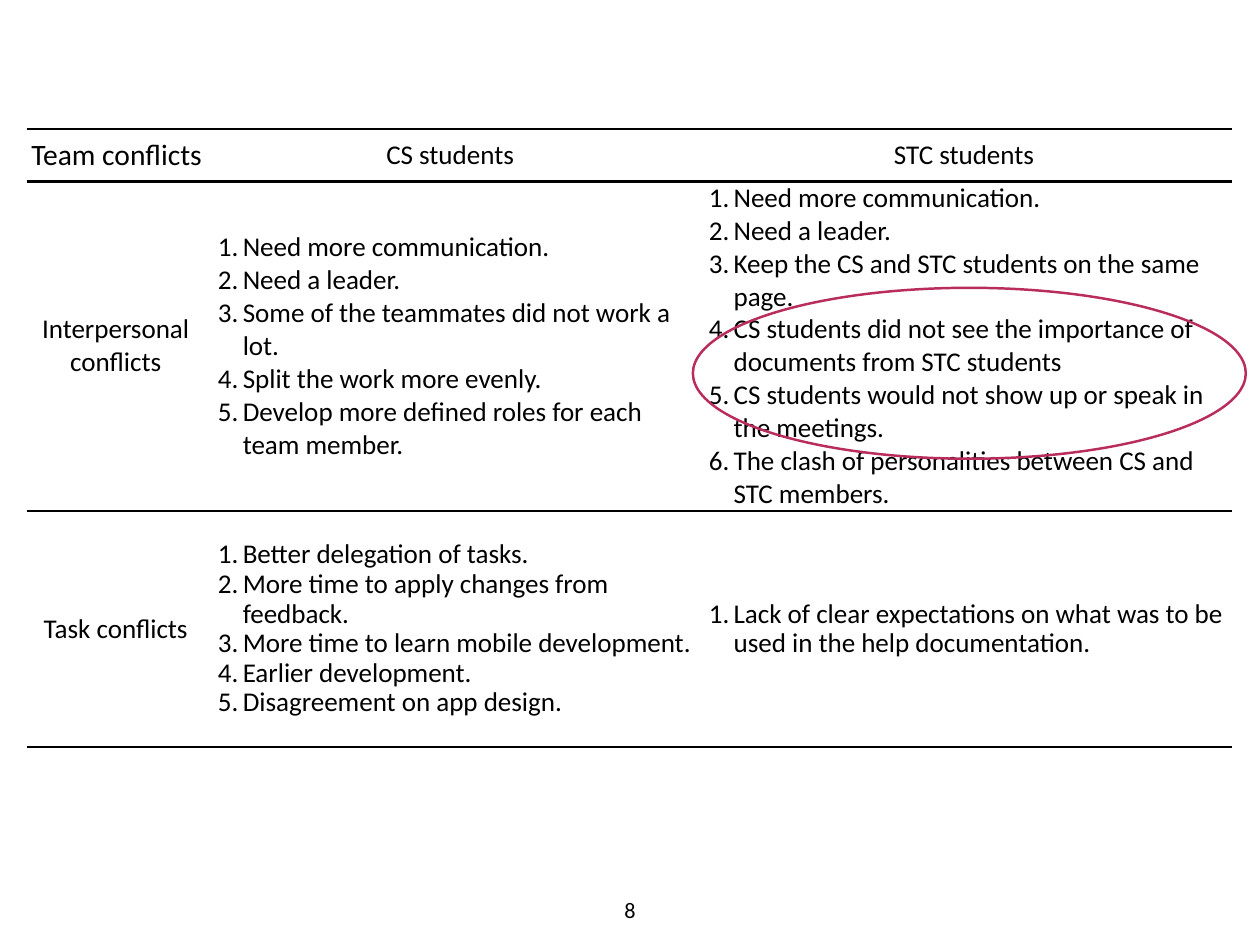
from lxml import etree
from pptx import Presentation
from pptx.dml.color import RGBColor
from pptx.enum.shapes import MSO_SHAPE
from pptx.enum.text import MSO_ANCHOR, PP_ALIGN
from pptx.oxml.ns import qn
from pptx.util import Inches, Pt

CENTER, LEFT = PP_ALIGN.CENTER, PP_ALIGN.LEFT
MIDDLE, TOP = MSO_ANCHOR.MIDDLE, MSO_ANCHOR.TOP
OVAL = MSO_SHAPE.OVAL

FONT = "Calibri"
BLACK = "000000"
CRIMSON = "B92D5D"
RULE_WIDTH = Pt(2)
COLUMN_WIDTHS = (2.01, 5.54, 6.06)
ROW_HEIGHTS = (0.59, 3.71, 2.67)

CONFLICTS = [
    ("Interpersonal conflicts", 1.0, [
        "Need more communication.",
        "Need a leader.",
        "Some of the teammates did not work a lot.",
        "Split the work more evenly.",
        "Develop more defined roles for each team member.",
    ], [
        "Need more communication.",
        "Need a leader.",
        "Keep the CS and STC students on the same page.",
        "CS students did not see the importance of documents from STC students",
        "CS students would not show up or speak in the meetings.",
        "The clash of personalities between CS and STC members.",
    ]),
    ("Task conflicts", 0.9, [
        "Better delegation of tasks.",
        "More time to apply changes from feedback.",
        "More time to learn mobile development.",
        "Earlier development.",
        "Disagreement on app design.",
    ], [
        "Lack of clear expectations on what was to be used in the help documentation.",
    ]),
]


def color(hex_value):
    return RGBColor.from_string(hex_value)


def write(frame, lines, size=22, align=CENTER, spacing=1.0, numbered=False):
    """Fill a text frame with one paragraph per line."""
    for index, line in enumerate(lines):
        paragraph = frame.paragraphs[0] if index == 0 else frame.add_paragraph()
        paragraph.alignment = align
        paragraph.line_spacing = spacing
        run = paragraph.add_run()
        run.text = line
        run.font.name = FONT
        run.font.size = Pt(size)
        run.font.color.rgb = color(BLACK)
        if numbered:
            properties = paragraph._p.get_or_add_pPr()
            properties.set("marL", str(Inches(0.43)))
            properties.set("indent", str(Inches(-0.28)))
            etree.SubElement(properties, qn("a:buAutoNum"), type="arabicPeriod")


def add_label(slide, text, left, top, width, height, size, anchor, inset):
    frame = slide.shapes.add_textbox(
        Inches(left), Inches(top), Inches(width), Inches(height)).text_frame
    frame.word_wrap = False
    frame.vertical_anchor = anchor
    frame.margin_left = frame.margin_right = Inches(inset)
    frame.margin_top = frame.margin_bottom = Inches(inset)
    write(frame, [text], size=size)


def style_cell(cell, inset):
    """Rule the cell above and below only, with no fill."""
    properties = cell._tc.get_or_add_tcPr()
    for side in ("lnL", "lnR", "lnT", "lnB"):
        border = etree.SubElement(properties, qn(f"a:{side}"))
        if side in ("lnT", "lnB"):
            border.set("w", str(RULE_WIDTH))
            fill = etree.SubElement(border, qn("a:solidFill"))
            etree.SubElement(fill, qn("a:srgbClr"), val=BLACK)
        else:
            etree.SubElement(border, qn("a:noFill"))
    cell.fill.background()
    cell.vertical_anchor = MIDDLE
    cell.margin_left = cell.margin_right = Inches(inset)
    cell.margin_top = cell.margin_bottom = Inches(inset)


def add_conflict_table(slide):
    table = slide.shapes.add_table(
        len(ROW_HEIGHTS), len(COLUMN_WIDTHS), Inches(0.3), Inches(1.46),
        Inches(sum(COLUMN_WIDTHS)), Inches(sum(ROW_HEIGHTS))).table
    table.first_row = table.horz_banding = False
    for column, width in zip(table.columns, COLUMN_WIDTHS):
        column.width = Inches(width)
    for row, height in zip(table.rows, ROW_HEIGHTS):
        row.height = Inches(height)
        for index, cell in enumerate(row.cells):
            style_cell(cell, inset=0.06 if index == 0 else 0)

    for column, group in enumerate(("CS students", "STC students"), start=1):
        write(table.cell(0, column).text_frame, [group], spacing=0.9)
    for row, (conflict, spacing, *answers) in enumerate(CONFLICTS, start=1):
        write(table.cell(row, 0).text_frame, [conflict])
        for column, items in enumerate(answers, start=1):
            write(table.cell(row, column).text_frame, items,
                  align=LEFT, spacing=spacing, numbered=True)


def add_highlight(slide, left, top, width, height):
    highlight = slide.shapes.add_shape(
        OVAL, Inches(left), Inches(top), Inches(width), Inches(height))
    highlight.shadow.inherit = False
    highlight.fill.background()
    highlight.line.color.rgb = color(CRIMSON)
    highlight.line.width = RULE_WIDTH


def main():
    presentation = Presentation()
    presentation.slide_width = Inches(14.22)
    presentation.slide_height = Inches(10.67)
    slide = presentation.slides.add_slide(presentation.slide_layouts[6])

    add_conflict_table(slide)
    add_label(slide, "8", 6.92, 10.12, 0.38, 0.4, size=18, anchor=TOP, inset=0)
    add_highlight(slide, 7.82, 3.25, 6.24, 1.93)
    add_label(slide, "Team conflicts", 0.29, 1.49, 2.05, 0.5,
              size=24, anchor=MIDDLE, inset=0.06)

    presentation.save("out.pptx")


if __name__ == "__main__":
    main()
